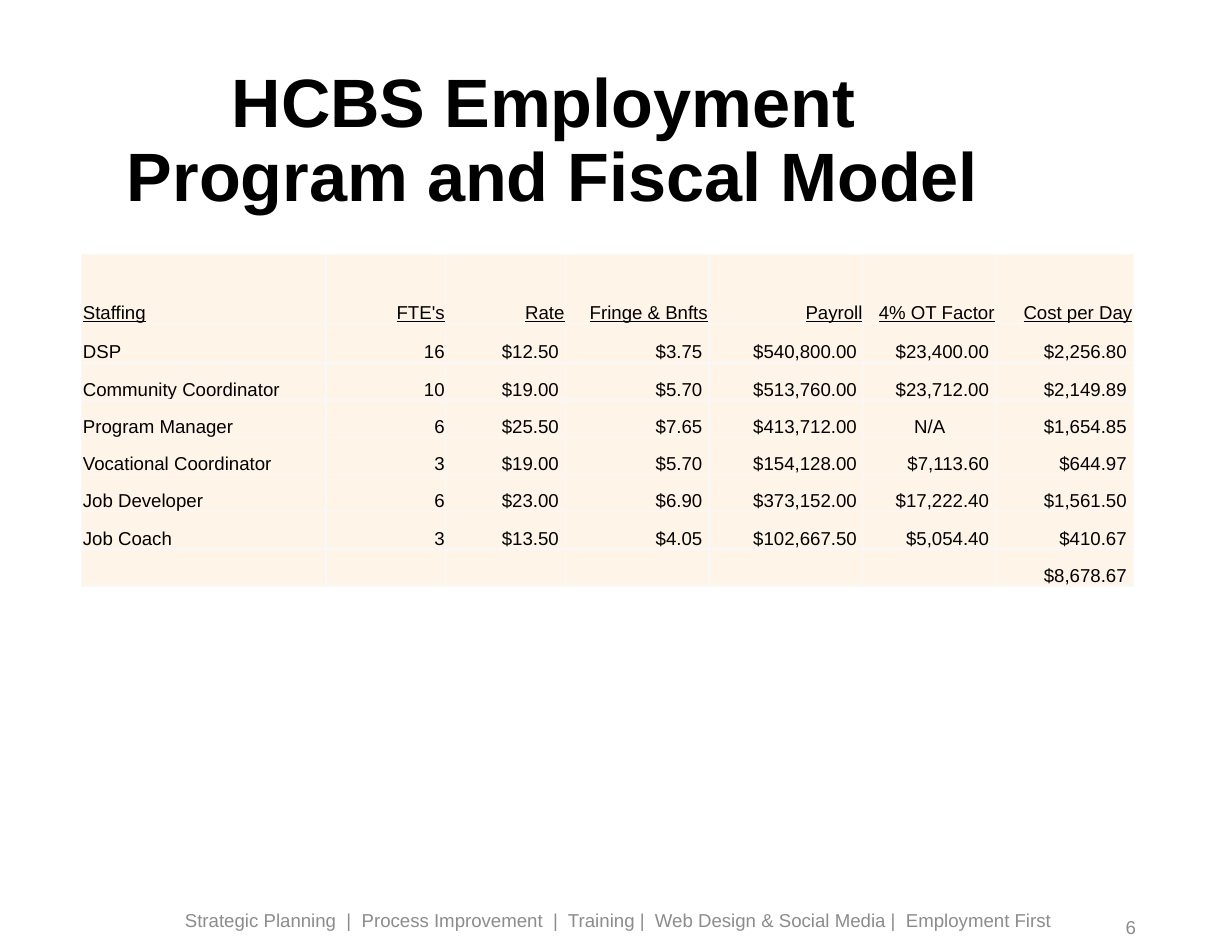
from lxml import etree
from pptx import Presentation
from pptx.dml.color import RGBColor
from pptx.enum.text import MSO_ANCHOR, PP_ALIGN
from pptx.oxml.ns import qn
from pptx.util import Inches, Pt

LEFT, CENTER, RIGHT = PP_ALIGN.LEFT, PP_ALIGN.CENTER, PP_ALIGN.RIGHT
MIDDLE, BOTTOM = MSO_ANCHOR.MIDDLE, MSO_ANCHOR.BOTTOM

SLIDE_WIDTH, SLIDE_HEIGHT = Inches(11), Inches(8.5)
COLORS = {"text": "000000", "footer": "8C8C8C", "cell": "FFF4E8", "border": "F8F8F8"}
FONT = "Arial"

COLUMN_SHARES = [19.82, 9.73, 9.73, 11.64, 12.55, 10.73, 11.18]
ROW_SHARES = [7.29, 4.12] + [3.91] * 6
STAFFING = [
    ["Staffing", "FTE's", "Rate", "Fringe & Bnfts", "Payroll", "4% OT Factor", "Cost per Day"],
    ["DSP", "16", "$12.50", "$3.75", "$540,800.00", "$23,400.00", "$2,256.80"],
    ["Community Coordinator", "10", "$19.00", "$5.70", "$513,760.00", "$23,712.00", "$2,149.89"],
    ["Program Manager", "6", "$25.50", "$7.65", "$413,712.00", "N/A", "$1,654.85"],
    ["Vocational Coordinator", "3", "$19.00", "$5.70", "$154,128.00", "$7,113.60", "$644.97"],
    ["Job Developer", "6", "$23.00", "$6.90", "$373,152.00", "$17,222.40", "$1,561.50"],
    ["Job Coach", "3", "$13.50", "$4.05", "$102,667.50", "$5,054.40", "$410.67"],
    ["", "", "", "", "", "", "$8,678.67"],
]


def across(percent):
    return round(SLIDE_WIDTH * percent / 100)


def down(percent):
    return round(SLIDE_HEIGHT * percent / 100)


def format_paragraph(para, size, color, align, bold=False, underline=False):
    para.alignment = align
    for span in para.runs:
        span.font.name = FONT
        span.font.size = Pt(size)
        span.font.bold = bold
        span.font.underline = underline
        span.font.color.rgb = RGBColor.from_string(COLORS[color])


def add_text(page, area, text, size, color, align, bold=False, line_spacing=1.0):
    left, top, width, height = area
    box = page.shapes.add_textbox(across(left), down(top), across(width), down(height))
    frame = box.text_frame
    frame.word_wrap = True
    frame.vertical_anchor = MIDDLE
    para = frame.paragraphs[0]
    para.text = text
    para.line_spacing = line_spacing
    format_paragraph(para, size, color, align, bold)


def add_borders(cell):
    properties = cell._tc.get_or_add_tcPr()
    for side in ("lnL", "lnR", "lnT", "lnB"):
        line = etree.SubElement(properties, qn(f"a:{side}"), w=str(Pt(1)))
        fill = etree.SubElement(line, qn("a:solidFill"))
        etree.SubElement(fill, qn("a:srgbClr"), val=COLORS["border"])


def fill_cell(cell, text, is_header, is_label):
    add_borders(cell)
    cell.fill.solid()
    cell.fill.fore_color.rgb = RGBColor.from_string(COLORS["cell"])
    cell.vertical_anchor = BOTTOM
    cell.margin_left = cell.margin_top = Inches(0.01)
    cell.margin_right = Inches(0.06 if text.startswith("$") else 0.01)
    cell.margin_bottom = 0
    if text:
        align = LEFT if is_label else CENTER if text == "N/A" else RIGHT
        cell.text_frame.text = text
        format_paragraph(cell.text_frame.paragraphs[0], 12, "text", align, underline=is_header)


def add_staffing_table(page, left, top):
    frame = page.shapes.add_table(
        len(ROW_SHARES), len(COLUMN_SHARES), across(left), down(top),
        across(sum(COLUMN_SHARES)), down(sum(ROW_SHARES)),
    )
    table = frame.table
    table.first_row = table.horz_banding = False
    for column, share in zip(table.columns, COLUMN_SHARES):
        column.width = across(share)
    for row, share in zip(table.rows, ROW_SHARES):
        row.height = down(share)
    for row_index, values in enumerate(STAFFING):
        for column_index, text in enumerate(values):
            fill_cell(table.cell(row_index, column_index), text, row_index == 0, column_index == 0)


def main():
    deck = Presentation()
    deck.slide_width, deck.slide_height = SLIDE_WIDTH, SLIDE_HEIGHT
    page = deck.slides.add_slide(deck.slide_layouts[6])
    add_text(page, (6.91, 5.29, 76, 19.29), "HCBS Employment \vProgram and Fiscal Model",
             44, "text", CENTER, bold=True, line_spacing=0.9)
    add_text(page, (7, 94, 86.45, 5.29),
             "Strategic Planning  |  Process Improvement  |  Training |  "
             "Web Design & Social Media |  Employment First",
             12, "footer", CENTER)
    add_text(page, (70.64, 94.71, 22.45, 5.29), "6", 12, "footer", RIGHT)
    add_staffing_table(page, 6.64, 26.71)
    deck.save("out.pptx")


if __name__ == "__main__":
    main()
